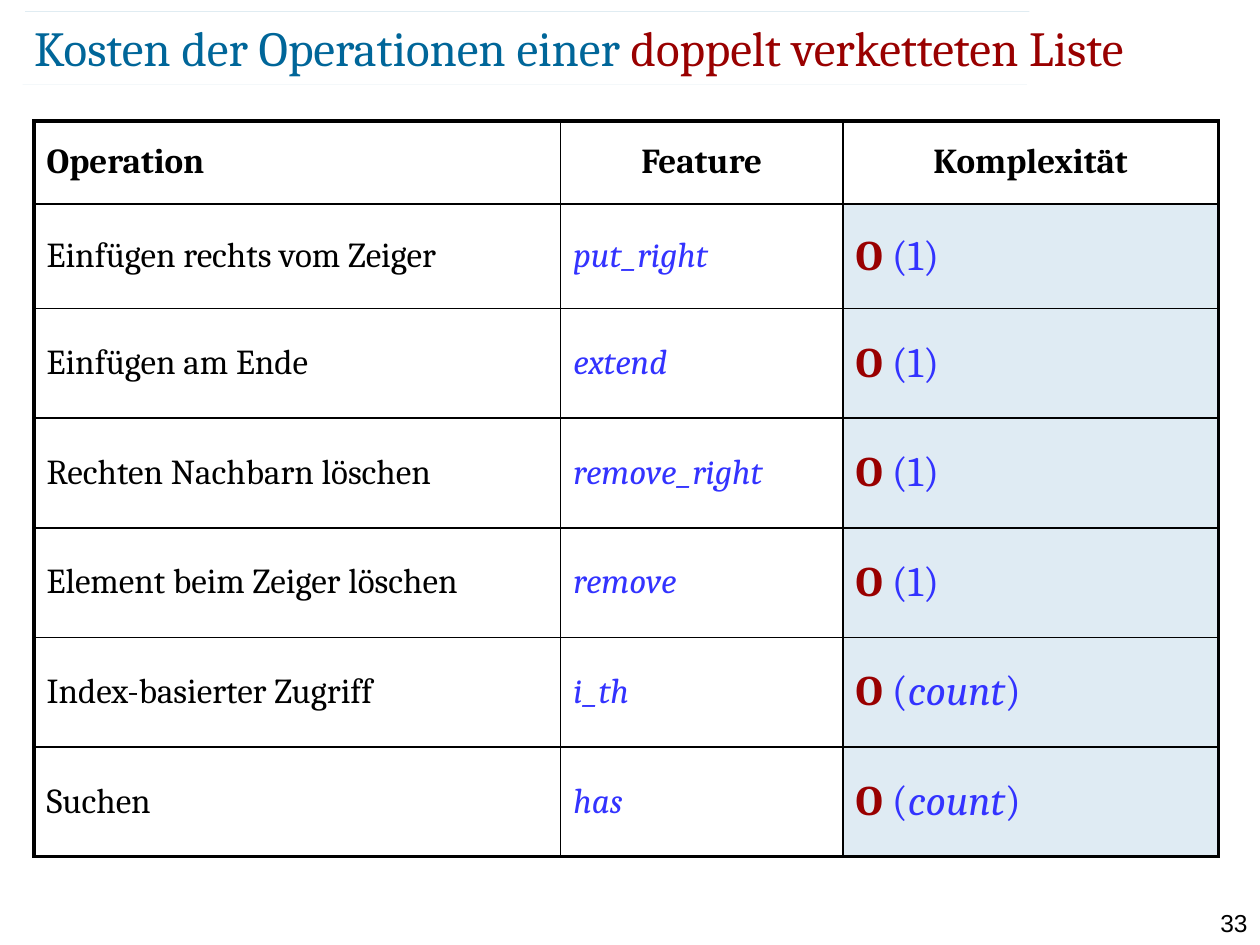
from dataclasses import dataclass

import lxml.etree
import pptx
import pptx.dml.color
import pptx.enum.shapes
import pptx.enum.text
import pptx.oxml.ns
import pptx.oxml.xmlchemy
import pptx.slide
import pptx.table
import pptx.text.text
import pptx.util
from pptx.util import Inches

Align = pptx.enum.text.PP_ALIGN
Anchor = pptx.enum.text.MSO_ANCHOR
qn = pptx.oxml.ns.qn


@dataclass(frozen=True)
class Theme:
    font: str = "Cambria"
    number_font: str = "Arial"
    title: str = "006699"
    accent: str = "990000"
    code: str = "3333FF"
    text: str = "000000"
    shade: str = "DFEBF3"
    title_size: float = 28
    text_size: float = 20
    cost_size: float = 24
    number_size: float = 14
    outer_border: float = 2.25
    inner_border: float = 1
    rule_width: float = 0.1
    rule_opacity: int = 35


THEME = Theme()


@dataclass(frozen=True)
class Span:
    text: str
    color: str = THEME.text
    size: float = THEME.text_size
    bold: bool = False
    italic: bool = False
    font: str = THEME.font


@dataclass(frozen=True)
class Operation:
    name: str
    feature: str
    cost: str


HEADERS = ("Operation", "Feature", "Komplexität")
OPERATIONS = (
    Operation("Einfügen rechts vom Zeiger", "put_right", "1"),
    Operation("Einfügen am Ende", "extend", "1"),
    Operation("Rechten Nachbarn löschen", "remove_right", "1"),
    Operation("Element beim Zeiger löschen", "remove", "1"),
    Operation("Index-basierter Zugriff", "i_th", "count"),
    Operation("Suchen", "has", "count"),
)
COLUMN_WIDTHS = (4.18, 2.24, 2.98)
ROW_HEIGHTS = (0.66, 0.83) + (0.87,) * 5


def rgb(color: str) -> pptx.dml.color.RGBColor:
    return pptx.dml.color.RGBColor.from_string(color)


def write_spans(paragraph: pptx.text.text._Paragraph, spans: list[Span]) -> None:
    for span in spans:
        run = paragraph.add_run()
        run.text = span.text
        run.font.name = span.font
        run.font.size = pptx.util.Pt(span.size)
        run.font.bold = span.bold
        run.font.italic = span.italic
        run.font.color.rgb = rgb(span.color)


def add_rule(slide: pptx.slide.Slide, left: float, top: float, length: float) -> None:
    """Draw a thin translucent horizontal line beside the title."""
    rule = slide.shapes.add_connector(
        pptx.enum.shapes.MSO_CONNECTOR.STRAIGHT,
        Inches(left), Inches(top), Inches(left + length), Inches(top))
    rule.line.width = pptx.util.Pt(THEME.rule_width)
    rule.line.color.rgb = rgb(THEME.title)
    properties = rule._element.spPr
    color = properties.find(".//" + qn("a:srgbClr"))
    lxml.etree.SubElement(color, qn("a:alpha"), val=str(THEME.rule_opacity * 1000))
    lxml.etree.SubElement(properties, qn("a:effectLst"))


def add_title(slide: pptx.slide.Slide) -> None:
    title = slide.shapes.title
    title.left, title.top = Inches(0.27), Inches(0.13)
    title.width, title.height = Inches(9.73), Inches(0.48)
    frame = title.text_frame
    frame.margin_left = frame.margin_right = frame.margin_top = frame.margin_bottom = 0
    frame.vertical_anchor = Anchor.MIDDLE
    frame.word_wrap = True
    frame.auto_size = pptx.enum.text.MSO_AUTO_SIZE.NONE
    paragraph = frame.paragraphs[0]
    paragraph.alignment = Align.LEFT
    write_spans(paragraph, [
        Span("Kosten der Operationen einer ", THEME.title, THEME.title_size),
        Span("doppelt verketteten Liste", THEME.accent, THEME.title_size),
    ])


def add_slide_number(slide: pptx.slide.Slide, number: str) -> None:
    box = slide.shapes.add_textbox(Inches(9.45), Inches(7.16), Inches(0.55), Inches(0.24))
    box.text_frame.word_wrap = True
    paragraph = box.text_frame.paragraphs[0]
    paragraph.alignment = Align.RIGHT
    write_spans(paragraph, [Span(number, size=THEME.number_size, font=THEME.number_font)])


def set_borders(cell: pptx.table._Cell, row: int, column: int) -> None:
    """Give the cell black borders, thick along the outside of the table."""
    on_outside = {
        "a:lnL": column == 0,
        "a:lnR": column == len(COLUMN_WIDTHS) - 1,
        "a:lnT": row == 0,
        "a:lnB": row == len(ROW_HEIGHTS) - 1,
    }
    properties = cell._tc.get_or_add_tcPr()
    for tag, outside in on_outside.items():
        width = THEME.outer_border if outside else THEME.inner_border
        border = lxml.etree.SubElement(properties, qn(tag), w=str(pptx.util.Pt(width)))
        fill = lxml.etree.SubElement(border, qn("a:solidFill"))
        lxml.etree.SubElement(fill, qn("a:srgbClr"), val=THEME.text)


def operation_cells(operation: Operation) -> list[list[Span]]:
    def cost_span(text: str, italic: bool = False) -> Span:
        return Span(text, THEME.code, THEME.cost_size, italic=italic)

    cost = [Span("O", THEME.accent, THEME.cost_size, bold=True)]
    if operation.cost.isdigit():
        cost.append(cost_span(f" ({operation.cost})"))
    else:
        cost += [cost_span(" ("), cost_span(operation.cost, italic=True), cost_span(")")]
    return [[Span(operation.name)],
            [Span(operation.feature, THEME.code, italic=True)],
            cost]


def add_cost_table(slide: pptx.slide.Slide) -> None:
    table = slide.shapes.add_table(
        len(ROW_HEIGHTS), len(COLUMN_WIDTHS), Inches(0.27), Inches(0.96),
        Inches(sum(COLUMN_WIDTHS)), Inches(sum(ROW_HEIGHTS))).table
    table.first_row = table.horz_banding = False
    for column, width in zip(table.columns, COLUMN_WIDTHS):
        column.width = Inches(width)
    for row, height in zip(table.rows, ROW_HEIGHTS):
        row.height = Inches(height)

    contents = [[[Span(header, bold=True)] for header in HEADERS]]
    contents += [operation_cells(operation) for operation in OPERATIONS]
    for row, cells in enumerate(contents):
        for column, spans in enumerate(cells):
            cell = table.cell(row, column)
            set_borders(cell, row, column)
            if row > 0 and column == 2:
                cell.fill.solid()
                cell.fill.fore_color.rgb = rgb(THEME.shade)
            else:
                cell.fill.background()
            cell.vertical_anchor = Anchor.MIDDLE
            paragraph = cell.text_frame.paragraphs[0]
            paragraph.alignment = Align.CENTER if row == 0 and column > 0 else Align.LEFT
            write_spans(paragraph, spans)


def main() -> None:
    presentation = pptx.Presentation()
    presentation.slide_width, presentation.slide_height = Inches(10), Inches(7.5)
    slide = presentation.slides.add_slide(presentation.slide_layouts.get_by_name("Title Only"))
    add_slide_number(slide, "33")
    add_rule(slide, 0.18, 0.67, 7.97)
    add_rule(slide, 0.2, 0.09, 7.97)
    add_title(slide)
    add_cost_table(slide)
    presentation.save("out.pptx")


if __name__ == "__main__":
    main()
